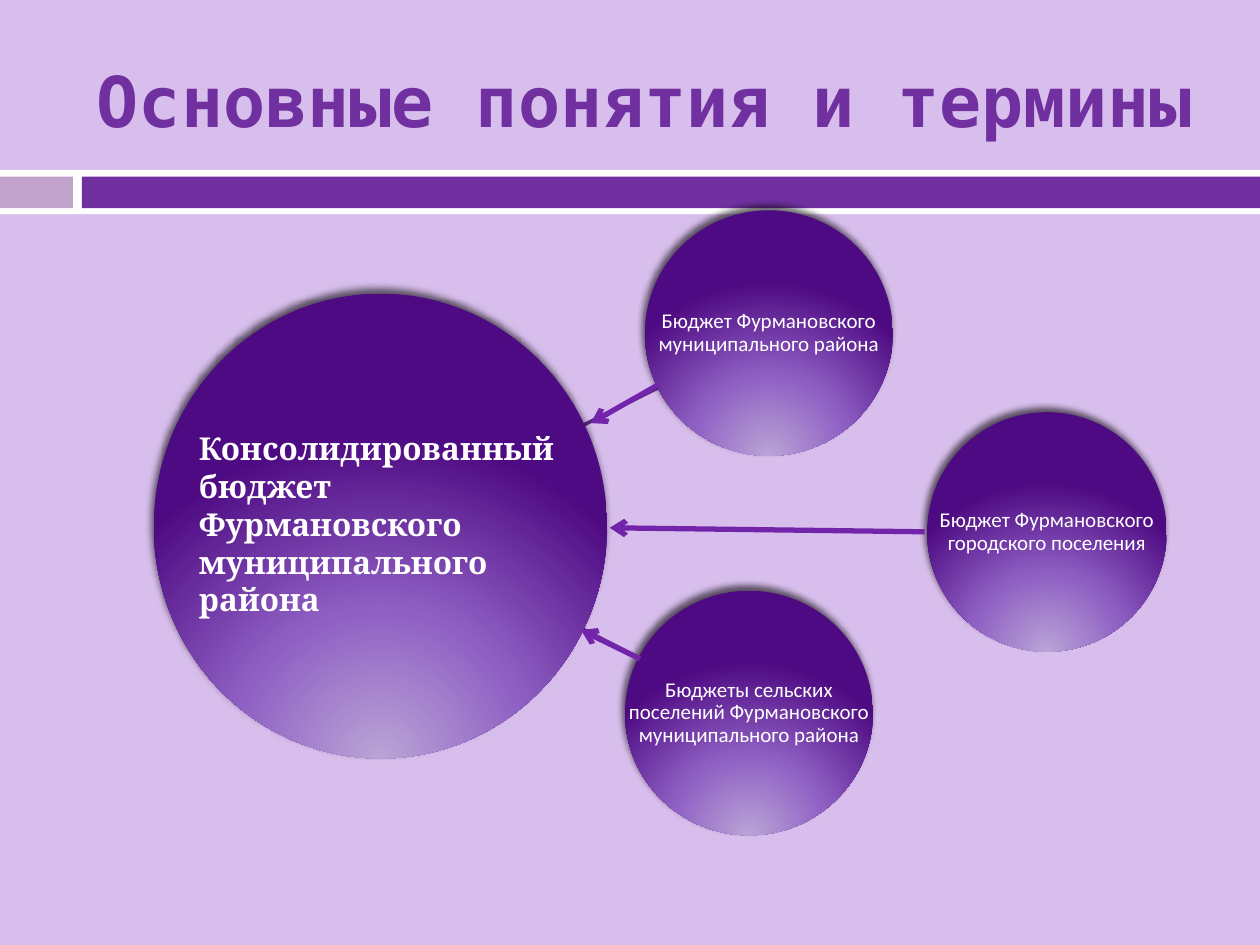
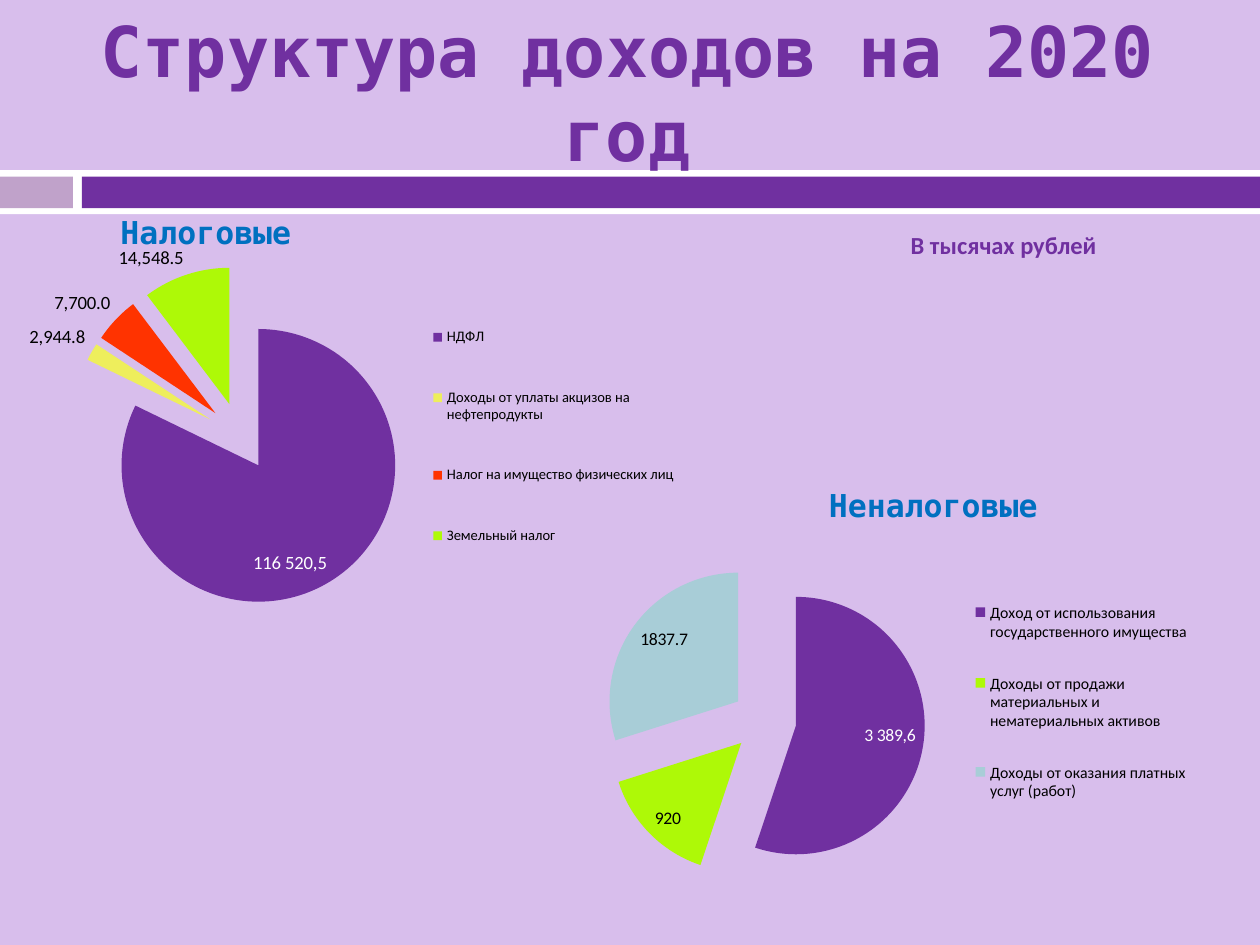
from lxml import etree
from pptx import Presentation
from pptx.chart.data import CategoryChartData
from pptx.dml.color import RGBColor
from pptx.enum.chart import XL_CHART_TYPE as ChartType
from pptx.enum.chart import XL_LABEL_POSITION as LabelPos
from pptx.enum.chart import XL_LEGEND_POSITION as LegendPos
from pptx.enum.shapes import MSO_CONNECTOR as Connector
from pptx.enum.shapes import MSO_SHAPE as Shape
from pptx.enum.text import MSO_ANCHOR as Anchor
from pptx.enum.text import MSO_AUTO_SIZE as AutoSize
from pptx.enum.text import PP_ALIGN as Align
from pptx.oxml import parse_xml
from pptx.oxml.ns import nsdecls, qn
from pptx.util import Cm, Pt

LILAC = RGBColor(0xD8, 0xBE, 0xEC)
MAUVE = RGBColor(0xC0, 0xA2, 0xCA)
PURPLE = RGBColor(0x70, 0x30, 0xA0)
ARROW_PURPLE = RGBColor(0x72, 0x25, 0xAB)
SPOKE_PURPLE = RGBColor(0x5A, 0x26, 0x80)
WHITE = RGBColor(0xFF, 0xFF, 0xFF)
BLACK = RGBColor(0x00, 0x00, 0x00)
BLUE = RGBColor(0x00, 0x70, 0xC0)
YELLOW = RGBColor(0xEE, 0xEE, 0x5C)
RED = RGBColor(0xFF, 0x33, 0x00)
LIME = RGBColor(0xAE, 0xF9, 0x07)
TEAL = RGBColor(0xA8, 0xCD, 0xD7)

MONO, SANS, SERIF = "DejaVu Sans Mono", "Calibri", "Cambria"

SPHERE_STOPS = [(0, "BAA4D6"), (46, "8F60C4"), (100, "4E0A82")]


def lengths(box):
    return [Cm(value) for value in box]


def shifted(box, origin):
    return (origin[0] + box[0], origin[1] + box[1], *box[2:])


def write_run(paragraph, text, size, font, color, bold=False):
    run = paragraph.add_run()
    run.text = text
    run.font.size = Pt(size)
    run.font.name = font
    run.font.bold = bold
    run.font.color.rgb = color


def add_text(slide, box, text, size, font, color, bold=False, wrap=True):
    frame = slide.shapes.add_textbox(*lengths(box)).text_frame
    frame.word_wrap = wrap
    write_run(frame.paragraphs[0], text, size, font, color, bold)
    return frame


def add_title(slide, box, text, align):
    title = slide.shapes.title
    title.left, title.top, title.width, title.height = lengths(box)
    frame = title.text_frame
    frame.auto_size = AutoSize.NONE
    frame.vertical_anchor = Anchor.MIDDLE
    frame.paragraphs[0].alignment = align
    write_run(frame.paragraphs[0], text, 40, MONO, PURPLE, True)


def add_line(slide, start, end, color, width, arrow=False):
    line = slide.shapes.add_connector(
        Connector.STRAIGHT, *lengths(start), *lengths(end))
    line.line.color.rgb = color
    line.line.width = Pt(width)
    properties = line._element.spPr
    if arrow:
        etree.SubElement(properties.find(qn("a:ln")), qn("a:tailEnd"), type="arrow")
    etree.SubElement(properties, qn("a:effectLst"))


def add_sphere(slide, box):
    sphere = slide.shapes.add_shape(Shape.OVAL, *lengths(box))
    sphere.line.fill.background()
    sphere.shadow.inherit = False
    properties = sphere._element.spPr
    stops = "".join(
        f'<a:gs pos="{place * 1000}"><a:srgbClr val="{color}"/></a:gs>'
        for place, color in SPHERE_STOPS)
    properties.insert(2, parse_xml(
        f'<a:gradFill {nsdecls("a")} rotWithShape="1"><a:gsLst>{stops}</a:gsLst>'
        '<a:path path="circle">'
        '<a:fillToRect l="50000" t="155000" r="50000" b="-55000"/>'
        '</a:path></a:gradFill>'))
    properties.find(qn("a:effectLst")).append(parse_xml(
        f'<a:outerShdw {nsdecls("a")} blurRad="50800" dist="38100" dir="14700000" '
        'rotWithShape="0"><a:srgbClr val="000000"><a:alpha val="60000"/>'
        '</a:srgbClr></a:outerShdw>'))


def add_budget(slide, box, text):
    add_sphere(slide, box)
    frame = add_text(slide, box, text, 12, SANS, WHITE)
    frame.vertical_anchor = Anchor.MIDDLE
    frame.margin_left = frame.margin_right = Cm(0.03)
    frame.margin_top = frame.margin_bottom = Cm(0.03)
    frame.paragraphs[0].alignment = Align.CENTER
    frame.paragraphs[0].line_spacing = 0.9


def style_master(prs, slide):
    master = prs.slide_master
    master.background.fill.solid()
    master.background.fill.fore_color.rgb = LILAC
    bands = [
        ((0, 3.43, 25.4, 0.89), WHITE),
        ((0, 3.56, 1.47, 0.64), MAUVE),
        ((1.65, 3.56, 23.75, 0.64), PURPLE),
    ]
    for order, (box, color) in enumerate(bands):
        band = slide.shapes.add_shape(Shape.RECTANGLE, *lengths(box))
        band.fill.solid()
        band.fill.fore_color.rgb = color
        band.line.fill.background()
        band.shadow.inherit = False
        band._element.nvSpPr.cNvPr.set("id", str(100 + order))
        master.shapes._spTree.insert(2 + order, band._element)


def add_budget_diagram(slide, origin):
    spokes = [((6.7, 5.31), (10.16, 3.58)), ((6.7, 7.44), (9.78, 9.02))]
    arrows = [
        ((10.18, 3.51), (8.81, 4.29)),
        ((9.8, 9.04), (8.61, 8.46)),
        ((15.54, 6.48), (9.19, 6.4)),
    ]
    budgets = [
        ((9.9, 0, 5, 4.95), "Бюджет Фурмановского муниципального района"),
        ((15.59, 4.07, 4.83, 4.83), "Бюджет Фурмановского городского поселения"),
        ((9.5, 7.67, 5, 4.93),
         "Бюджеты сельских поселений Фурмановского муниципального района"),
    ]
    for start, end in spokes:
        add_line(slide, shifted(start, origin), shifted(end, origin), SPOKE_PURPLE, 2)
    add_sphere(slide, shifted((0, 1.68, 9.14, 9.37), origin))
    for box, text in budgets:
        add_budget(slide, shifted(box, origin), text)
    add_text(slide, shifted((0.66, 4.29, 7.92, 4.88), origin),
             "Консолидированный бюджет Фурмановского муниципального района",
             18, SERIF, WHITE, True)
    for start, end in arrows:
        add_line(slide, shifted(start, origin), shifted(end, origin),
                 ARROW_PURPLE, 3, arrow=True)


def set_layout(parent, index, box, inner=False):
    for old in parent.findall(qn("c:layout")):
        parent.remove(old)
    target = '<c:layoutTarget val="inner"/>' if inner else ""
    modes = '<c:xMode val="edge"/><c:yMode val="edge"/>'
    sizes = "".join(f'<c:{side} val="{value}"/>' for side, value in zip("xywh", box))
    parent.insert(index, parse_xml(
        f'<c:layout {nsdecls("c")}><c:manualLayout>{target}{modes}{sizes}'
        '</c:manualLayout></c:layout>'))


def add_income_pie(slide, box, incomes, main_label, number_format, label_pos,
                   size, legend_size, plot_box, legend_box):
    data = CategoryChartData()
    data.categories = [name for name, _, _ in incomes]
    data.add_series("Series 1", [value for _, value, _ in incomes])
    chart = slide.shapes.add_chart(ChartType.PIE, *lengths(box), data).chart
    chart.has_title = False
    chart.font.size = Pt(size)
    chart.font.name = SANS
    chart.font.color.rgb = BLACK

    chart.has_legend = True
    legend = chart.legend
    legend.position = LegendPos.RIGHT
    legend.include_in_layout = False
    legend.font.size = Pt(legend_size)
    set_layout(legend._element, 1, legend_box)
    set_layout(chart._chartSpace.chart.plotArea, 0, plot_box, inner=True)

    plot = chart.plots[0]
    plot.vary_by_categories = True
    series = plot.series[0]
    for index, (_, _, color) in enumerate(incomes):
        fill = series.points[index].format.fill
        fill.solid()
        fill.fore_color.rgb = color
    explosion = etree.Element(qn("c:explosion"), val="25")
    series._element.find(qn("c:dPt")).addprevious(explosion)

    labels = series.data_labels
    labels.show_value = True
    labels.number_format = number_format
    labels.number_format_is_linked = False
    labels.position = label_pos
    main = series.points[0].data_label
    write_run(main.text_frame.paragraphs[0], main_label, size, SANS, WHITE)
    main.position = LabelPos.INSIDE_END


def add_tax_income(slide, origin):
    incomes = [
        ("НДФЛ", 116520.5, PURPLE),
        ("Доходы от уплаты акцизов на нефтепродукты", 2944.8, YELLOW),
        ("Налог на имущество физических лиц", 7700, RED),
        ("Земельный налог", 14548.5, LIME),
    ]
    add_income_pie(slide, shifted((0, 0.78, 14.68, 7.75), origin), incomes,
                   "116 520,5", "#,##0.0", LabelPos.OUTSIDE_END, 10.7, 8.3,
                   (0.03, 0.05, 0.6, 0.89), (0.58, 0.1, 0.36, 0.79))
    add_text(slide, shifted((2.18, 0, 4.39, 1.02), origin), "Налоговые",
             18, MONO, BLUE, True, wrap=False)


def add_non_tax_income(slide, origin):
    incomes = [
        ("Доход от использования государственного имущества", 3389.6, PURPLE),
        ("Доходы от продажи материальных и нематериальных активов", 920, LIME),
        ("Доходы от оказания платных услуг (работ)", 1837.7, TEAL),
    ]
    add_income_pie(slide, shifted((0, 1.24, 14.2, 7.21), origin), incomes,
                   "3 389,6", "General", LabelPos.INSIDE_END, 10.1, 9,
                   (0.1, 0.05, 0.46, 0.9), (0.61, 0.08, 0.34, 0.74))
    add_text(slide, shifted((5.74, 0, 5.21, 1.02), origin), "Неналоговые",
             18, MONO, BLUE, True, wrap=False)


def build_terms(slide):
    add_title(slide, (1.7, 0.64, 22.66, 2.74), "Основные понятия и термины", Align.LEFT)
    add_budget_diagram(slide, (3.1, 4.24))


def build_income(slide):
    add_title(slide, (0.79, 1.19, 23.7, 1.32), "Структура доходов на 2020 год",
              Align.CENTER)
    add_tax_income(slide, (0, 4.17))
    add_non_tax_income(slide, (10.72, 9.68))
    add_text(slide, (18.11, 4.52, 5.77, 1.19), "В тысячах рублей",
             14, SANS, PURPLE, True)


def main():
    prs = Presentation()
    prs.slide_width, prs.slide_height = Cm(25.4), Cm(19.05)
    title_only = prs.slide_layouts[5]
    terms, income = (prs.slides.add_slide(title_only) for _ in range(2))
    style_master(prs, terms)
    build_terms(terms)
    build_income(income)
    prs.save("out.pptx")


if __name__ == "__main__":
    main()
